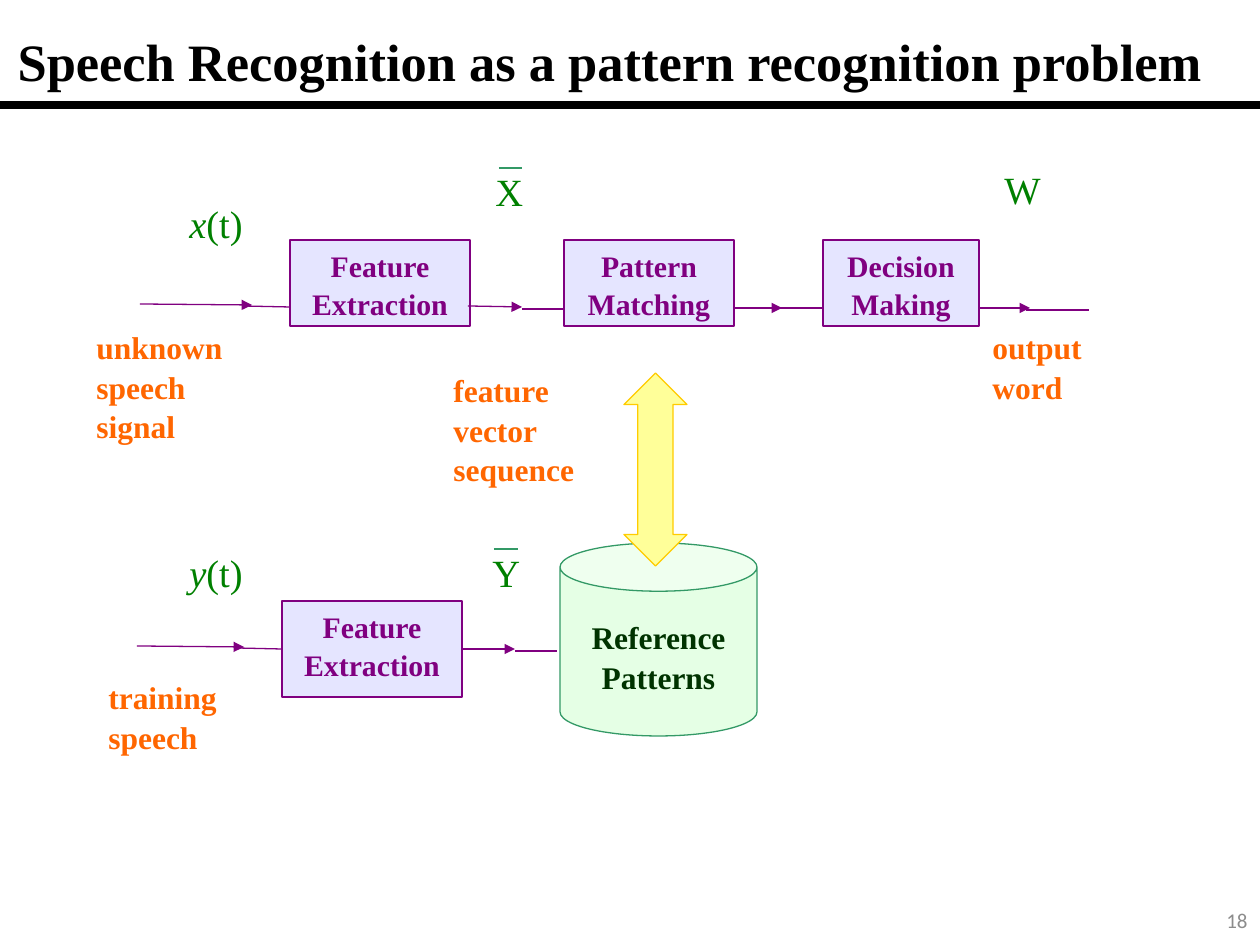
from dataclasses import dataclass

from lxml import etree
from pptx import Presentation
from pptx import util as u
from pptx.dml.color import RGBColor
from pptx.enum import shapes, text
from pptx.oxml.ns import qn

PURPLE = RGBColor(0x80, 0x00, 0x80)
LAVENDER = RGBColor(0xCC, 0xCC, 0xFF)
ORANGE = RGBColor(0xFF, 0x66, 0x00)
GREEN = RGBColor(0x00, 0x80, 0x00)
SEA_GREEN = RGBColor(0x33, 0x99, 0x66)
MINT = RGBColor(0xCC, 0xFF, 0xCC)
DARK_GREEN = RGBColor(0x00, 0x33, 0x00)
YELLOW = RGBColor(0xFF, 0xFF, 0x99)
GOLD = RGBColor(0xFF, 0xCC, 0x00)
BLACK = RGBColor(0x00, 0x00, 0x00)
GRAY = RGBColor(0x8C, 0x8C, 0x8C)
SERIF = "Times New Roman"
LEFT, RIGHT = 1, 3


def px(n: int) -> u.Emu:
    return u.Emu(round(n * 914400 / 126))


@dataclass
class Box:
    label: str
    x: int
    y: int
    w: int
    h: int


@dataclass
class Label:
    words: str
    x: int
    y: int
    w: int
    h: int
    italic_first: bool = False


@dataclass
class Line:
    x1: int
    y1: int
    x2: int
    y2: int
    arrow: bool = False
    color: RGBColor = PURPLE
    width: float = 0.75


def style(p, size: int, color: RGBColor, bold: bool = False, font: str = SERIF) -> None:
    p.font.name, p.font.size, p.font.bold = font, u.Pt(size), bold
    p.font.color.rgb = color


def add_shape(s, kind, box: Box, fill: RGBColor, line: RGBColor, alpha: int = 100):
    sp = s.shapes.add_shape(kind, px(box.x), px(box.y), px(box.w), px(box.h))
    sp.shadow.inherit = False
    sp.fill.solid()
    sp.fill.fore_color.rgb = fill
    if alpha < 100:
        color = sp.fill._xPr.find(qn("a:solidFill"))[0]
        etree.SubElement(color, qn("a:alpha"), val=str(alpha * 1000))
    sp.line.color.rgb = line
    sp.line.width = u.Pt(0.75)
    return sp


def write_centred(sp, words: str, size: int, color: RGBColor, top: int = 6) -> None:
    tf = sp.text_frame
    tf.word_wrap = True
    tf.vertical_anchor = text.MSO_ANCHOR.TOP
    tf.margin_top = px(top)
    p = tf.paragraphs[0]
    p.text = words
    p.alignment = text.PP_ALIGN.CENTER
    p.line_spacing = 1.05
    style(p, size, color, True)


def add_stage(s, box: Box):
    sp = add_shape(s, shapes.MSO_SHAPE.RECTANGLE, box, LAVENDER, PURPLE, 50)
    write_centred(sp, box.label, 17, PURPLE)
    return sp


def add_label(s, label: Label, size: int, color: RGBColor, bold: bool = False):
    sp = s.shapes.add_textbox(px(label.x), px(label.y), px(label.w), px(label.h))
    tf = sp.text_frame
    tf.word_wrap = True
    p = tf.paragraphs[0]
    p.line_spacing = 1.05
    style(p, size, color, bold)
    if label.italic_first:
        r = p.add_run()
        r.text = label.words[0]
        r.font.italic = True
        p.add_run().text = label.words[1:]
    else:
        p.add_run().text = label.words
    return sp


def add_line(s, line: Line):
    c = s.shapes.add_connector(shapes.MSO_CONNECTOR.STRAIGHT, px(line.x1), px(line.y1),
                               px(line.x2), px(line.y2))
    c.line.color.rgb = line.color
    c.line.width = u.Pt(line.width)
    if line.arrow:
        etree.SubElement(c.line._get_or_add_ln(), qn("a:tailEnd"), type="triangle")
    etree.SubElement(c._element.spPr, qn("a:effectLst"))
    return c


STAGES = [
    Box("Feature Extraction", 290, 240, 180, 86),
    Box("Pattern Matching", 564, 240, 170, 86),
    Box("Decision Making", 823, 240, 156, 86),
]
TRAINING_STAGE = Box("Feature Extraction", 282, 601, 180, 96)
LINES = [
    Line(140, 304, 252, 305, True),
    Line(243, 306, 289, 307),
    Line(468, 306, 522, 307, True),
    Line(522, 309, 564, 309),
    Line(734, 308, 782, 308, True),
    Line(780, 308, 823, 308),
    Line(979, 308, 1030, 308, True),
    Line(1026, 310, 1089, 310),
    Line(137, 646, 244, 647, True),
    Line(515, 651, 557, 651),
    Line(499, 168, 522, 168, color=SEA_GREEN),
    Line(494, 549, 518, 549, color=SEA_GREEN),
    Line(0, 105, 1260, 105, color=BLACK, width=4.5),
]
SYMBOLS = [
    Label("x(t)", 177, 192, 105, 128, True),
    Label("X", 483, 160, 69, 107),
    Label("W", 992, 158, 69, 107),
    Label("y(t)", 177, 541, 105, 128, True),
    Label("Y", 480, 541, 69, 107),
]
CAPTIONS = [
    Label("unknown speech signal", 84, 320, 174, 171),
    Label("feature vector sequence", 441, 363, 174, 171),
    Label("output word", 980, 320, 129, 128),
    Label("training speech", 96, 670, 175, 128),
]


def main() -> None:
    prs = Presentation()
    prs.slide_width, prs.slide_height = px(1260), px(945)
    s = prs.slides.add_slide(prs.slide_layouts[5])

    title = s.shapes.title
    title.left, title.top, title.width, title.height = px(5), px(17), px(1259), px(87)
    tf = title.text_frame
    tf.text = "Speech Recognition as a pattern recognition problem"
    tf.auto_size = text.MSO_AUTO_SIZE.NONE
    tf.vertical_anchor = text.MSO_ANCHOR.MIDDLE
    tf.paragraphs[0].alignment = text.PP_ALIGN.LEFT
    style(tf.paragraphs[0], 30, BLACK, True)

    for box in STAGES:
        add_stage(s, box)
    training = add_stage(s, TRAINING_STAGE)
    for line in LINES:
        add_line(s, line)
    add_line(s, Line(236, 648, 282, 649)).end_connect(training, LEFT)
    add_line(s, Line(462, 649, 515, 649, True)).begin_connect(training, RIGHT)

    patterns = Box("Reference Patterns", 560, 543, 197, 193)
    can = add_shape(s, shapes.MSO_SHAPE.CAN, patterns, MINT, SEA_GREEN, 50)
    write_centred(can, patterns.label, 18, DARK_GREEN, 25)
    arrow = add_shape(s, shapes.MSO_SHAPE.UP_DOWN_ARROW, Box("", 624, 373, 63, 193),
                      YELLOW, GOLD)
    arrow.adjustments[1] = 0.56

    for label in SYMBOLS:
        add_label(s, label, 22, GREEN)
    for label in CAPTIONS:
        add_label(s, label, 18, ORANGE, True)

    number = add_label(s, Label("18", 976, 895, 284, 50), 12, GRAY)
    number.text_frame.vertical_anchor = text.MSO_ANCHOR.MIDDLE
    p = number.text_frame.paragraphs[0]
    p.alignment = text.PP_ALIGN.RIGHT
    style(p, 12, GRAY, font="Calibri")

    prs.save("out.pptx")


if __name__ == "__main__":
    main()
